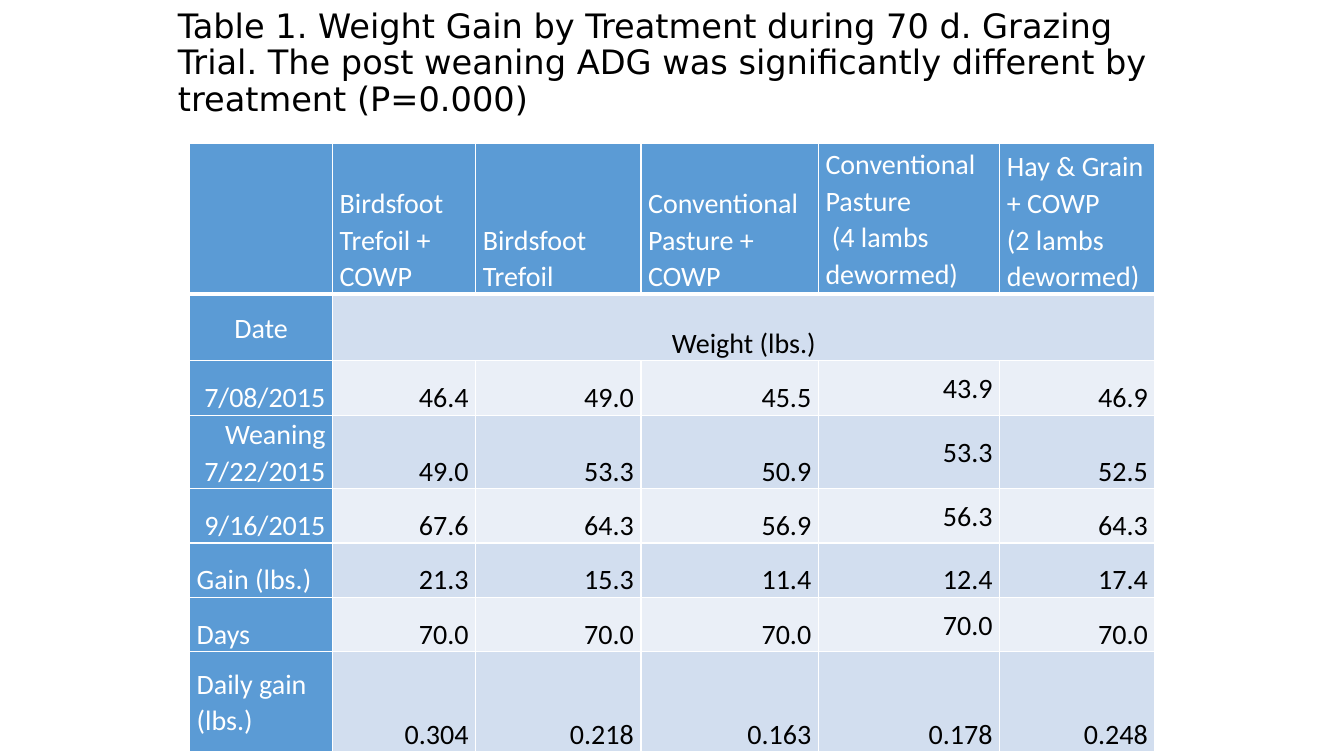
"""Build the slide with the lamb weight gain table."""
from dataclasses import dataclass

from lxml.etree import SubElement
from pptx import Presentation
from pptx.dml.color import RGBColor
from pptx.enum.text import MSO_ANCHOR, PP_ALIGN
from pptx.oxml.ns import qn
from pptx.slide import Slide
from pptx.table import _Cell
from pptx.text.text import _Paragraph
from pptx.util import Emu, Inches, Pt

WHITE = RGBColor(0xFF, 0xFF, 0xFF)
BLACK = RGBColor(0x00, 0x00, 0x00)
HEADING_BLUE = RGBColor(0x5B, 0x9B, 0xD5)
BANDS = (RGBColor(0xEA, 0xEF, 0xF7), RGBColor(0xD2, 0xDE, 0xEF))

SLIDE_WIDTH = Inches(13.33)
SLIDE_HEIGHT = Inches(7.5)
COLUMN_SHARES = (10.65, 10.65, 12.3, 13.2, 13.5, 11.55)
TABLE_LEFT, TABLE_TOP = 14.1, 18.93
HEADING_SHARE = 20
CELL_INSET = 0.53

LEFT, CENTER, RIGHT = PP_ALIGN.LEFT, PP_ALIGN.CENTER, PP_ALIGN.RIGHT
BOTTOM, MIDDLE = MSO_ANCHOR.BOTTOM, MSO_ANCHOR.MIDDLE

TITLE = (
    "Table 1. Weight Gain by Treatment during 70 d. Grazing Trial. "
    "The post weaning ADG was significantly different by treatment (P=0.000)"
)


@dataclass(frozen=True)
class Treatment:
    """A column heading, one string per paragraph."""

    paragraphs: tuple[str, ...] = ()
    anchor: MSO_ANCHOR = BOTTOM


@dataclass(frozen=True)
class Measure:
    """A body row: its label, values, height share and placement."""

    label: str
    values: tuple[str, ...]
    share: float = 7.2
    label_align: PP_ALIGN = RIGHT
    label_anchor: MSO_ANCHOR = BOTTOM
    value_align: PP_ALIGN = RIGHT
    dewormed_anchor: MSO_ANCHOR = BOTTOM


TREATMENTS = (
    Treatment(),
    Treatment(("Birdsfoot Trefoil + COWP",)),
    Treatment(("Birdsfoot Trefoil",)),
    Treatment(("Conventional Pasture + COWP",)),
    Treatment(("Conventional\nPasture", " (4 lambs dewormed)"), MIDDLE),
    Treatment(("Hay & Grain + COWP", "(2 lambs dewormed)")),
)
DEWORMED_COLUMN = 4
MEASURES = (
    Measure("Date", ("Weight (lbs.)",), 8.8, CENTER, MIDDLE, CENTER),
    Measure("7/08/2015", ("46.4", "49.0", "45.5", "43.9", "46.9"), dewormed_anchor=MIDDLE),
    Measure("Weaning\n7/22/2015", ("49.0", "53.3", "50.9", "53.3", "52.5"), 9.47,
            dewormed_anchor=MIDDLE),
    Measure("9/16/2015", ("67.6", "64.3", "56.9", "56.3", "64.3"), dewormed_anchor=MIDDLE),
    Measure("Gain (lbs.)", ("21.3", "15.3", "11.4", "12.4", "17.4"), label_align=LEFT),
    Measure("Days", ("70.0", "70.0", "70.0", "70.0", "70.0"), label_align=LEFT,
            dewormed_anchor=MIDDLE),
    Measure("Daily gain (lbs.)", ("0.304", "0.218", "0.163", "0.178", "0.248"), 13.2,
            LEFT, MIDDLE),
)


def across(share: float) -> Emu:
    """Turn a percentage of the slide's width into a length."""
    return Emu(round(SLIDE_WIDTH * share / 100))


def down(share: float) -> Emu:
    """Turn a percentage of the slide's height into a length."""
    return Emu(round(SLIDE_HEIGHT * share / 100))


def add_words(paragraph: _Paragraph, words: str, font: str, size: int, color: RGBColor) -> None:
    """Add runs to a paragraph, with a line break at each newline."""
    for index, line in enumerate(words.split("\n")):
        if index:
            paragraph.add_line_break()
        run = paragraph.add_run()
        run.text = line
        run.font.name = font
        run.font.size = Pt(size)
        run.font.bold = False
        run.font.color.rgb = color


def add_borders(cell: _Cell, bottom: int) -> None:
    """Draw white borders around a cell."""
    properties = cell._tc.get_or_add_tcPr()
    widths = {"a:lnL": 1, "a:lnR": 1, "a:lnT": 1, "a:lnB": bottom}
    for index, (side, width) in enumerate(widths.items()):
        border = SubElement(properties, qn(side), w=str(Pt(width)))
        fill = SubElement(border, qn("a:solidFill"))
        SubElement(fill, qn("a:srgbClr"), val=str(WHITE))
        properties.insert(index, border)


def fill_cell(cell: _Cell, paragraphs: tuple[str, ...], fill: RGBColor, color: RGBColor,
              align: PP_ALIGN, anchor: MSO_ANCHOR, bottom: int = 1) -> None:
    """Set a cell's words, fill, placement and borders."""
    cell.fill.solid()
    cell.fill.fore_color.rgb = fill
    cell.vertical_anchor = anchor
    cell.margin_left = cell.margin_right = across(CELL_INSET)
    cell.margin_top = cell.margin_bottom = 0
    for index, words in enumerate(paragraphs):
        frame = cell.text_frame
        paragraph = frame.add_paragraph() if index else frame.paragraphs[0]
        paragraph.alignment = align
        paragraph.line_spacing = 1.07
        add_words(paragraph, words, "Calibri", 20, color)
    add_borders(cell, bottom)


def add_title(slide: Slide) -> None:
    """Write the table's caption at the top of the slide."""
    caption = slide.shapes.add_textbox(across(12.5), down(0.13), across(75), down(16.67))
    frame = caption.text_frame
    frame.word_wrap = True
    frame.vertical_anchor = MIDDLE
    frame.paragraphs[0].line_spacing = 0.9
    add_words(frame.paragraphs[0], TITLE, "DejaVu Sans", 24, BLACK)


def add_weights(slide: Slide) -> None:
    """Draw the table of weights by treatment."""
    row_shares = (HEADING_SHARE, *(measure.share for measure in MEASURES))
    weights = slide.shapes.add_table(
        len(row_shares), len(COLUMN_SHARES), across(TABLE_LEFT), down(TABLE_TOP),
        across(sum(COLUMN_SHARES)), down(sum(row_shares)),
    ).table
    weights.first_row = weights.horz_banding = False
    for column, share in zip(weights.columns, COLUMN_SHARES):
        column.width = across(share)
    for row, share in zip(weights.rows, row_shares):
        row.height = down(share)

    for column, treatment in enumerate(TREATMENTS):
        fill_cell(weights.cell(0, column), treatment.paragraphs, HEADING_BLUE, WHITE,
                  LEFT, treatment.anchor, bottom=3)
    for row, measure in enumerate(MEASURES, start=1):
        fill_cell(weights.cell(row, 0), (measure.label,), HEADING_BLUE, WHITE,
                  measure.label_align, measure.label_anchor)
        for column in range(1, len(COLUMN_SHARES)):
            anchor = measure.dewormed_anchor if column == DEWORMED_COLUMN else BOTTOM
            fill_cell(weights.cell(row, column), measure.values[column - 1:column],
                      BANDS[row % 2], BLACK, measure.value_align, anchor)
        if len(measure.values) == 1:
            weights.cell(row, 1).merge(weights.cell(row, len(COLUMN_SHARES) - 1))


def main() -> None:
    """Build and save the presentation."""
    presentation = Presentation()
    presentation.slide_width = SLIDE_WIDTH
    presentation.slide_height = SLIDE_HEIGHT
    slide = presentation.slides.add_slide(presentation.slide_layouts[6])
    add_weights(slide)
    add_title(slide)
    presentation.save("out.pptx")


if __name__ == "__main__":
    main()
